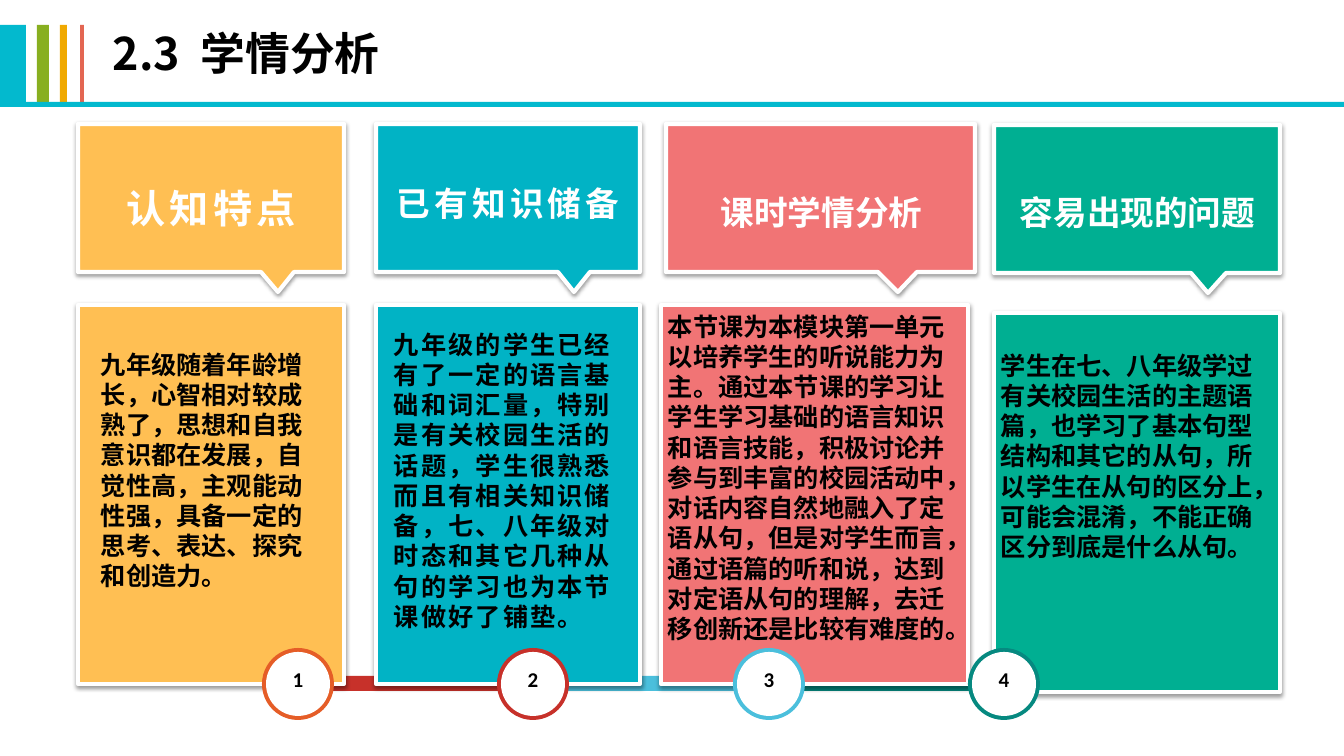
from lxml import etree
from pptx import Presentation
from pptx.dml.color import RGBColor
from pptx.enum.shapes import MSO_SHAPE
from pptx.enum.text import MSO_ANCHOR, PP_ALIGN
from pptx.oxml.ns import qn
from pptx.util import Pt

PX = 914400 / 100.8
RECT, OVAL = MSO_SHAPE.RECTANGLE, MSO_SHAPE.OVAL
TOP, MIDDLE, BOTTOM = MSO_ANCHOR.TOP, MSO_ANCHOR.MIDDLE, MSO_ANCHOR.BOTTOM
LEFT, CENTER = PP_ALIGN.LEFT, PP_ALIGN.CENTER
CJK, LATIN = "Noto Sans CJK SC", "Calibri"

WHITE = RGBColor(0xFF, 0xFF, 0xFF)
BLACK = RGBColor(0, 0, 0)
CYAN = RGBColor(0x03, 0xB9, 0xCE)
GREEN = RGBColor(0x88, 0xAF, 0x20)
AMBER = RGBColor(0xF0, 0xA9, 0x01)
CORAL = RGBColor(0xE3, 0x66, 0x52)
YELLOW = RGBColor(0xFF, 0xBF, 0x53)
TURQUOISE = RGBColor(0x01, 0xB3, 0xC5)
PINK = RGBColor(0xF1, 0x74, 0x75)
EMERALD = RGBColor(0x00, 0xAF, 0x92)
ORANGE = RGBColor(0xE5, 0x5D, 0x27)
RED = RGBColor(0xC7, 0x31, 0x2A)
SKY = RGBColor(0x4B, 0xBF, 0xDC)
TEAL = RGBColor(0x06, 0x89, 0x80)

STRIPES = [(0, 26, CYAN), (37, 12, GREEN), (60, 7, AMBER), (80, 4, CORAL)]
RULE_EDGES = [0, 422, 794, 1092, 1344]
STEP_CENTRES = [298, 533, 769, 1004]
STEP_COLOURS = [ORANGE, RED, SKY, TEAL]

COGNITION = "九年级随着年龄增长，心智相对较成熟了，思想和自我意识都在发展，自觉性高，主观能动性强，具备一定的思考、表达、探究和创造力。"
KNOWLEDGE = "九年级的学生已经有了一定的语言基础和词汇量，特别是有关校园生活的话题，学生很熟悉而且有相关知识储备，七、八年级对时态和其它几种从句的学习也为本节课做好了铺垫。"
LESSON = "本节课为本模块第一单元以培养学生的听说能力为主。通过本节课的学习让学生学习基础的语言知识和语言技能，积极讨论并参与到丰富的校园活动中，对话内容自然地融入了定语从句，但是对学生而言，通过语篇的听和说，达到对定语从句的理解，去迁移创新还是比较有难度的。"
PROBLEMS = "学生在七、八年级学过有关校园生活的主题语篇，也学习了基本句型结构和其它的从句，所以学生在从句的区分上，可能会混淆，不能正确区分到底是什么从句。"


def px(n):
    return round(n * PX)


def add_block(s, kind, x, y, w, h, colour):
    sp = s.shapes.add_shape(kind, px(x), px(y), px(w), px(h))
    sp.shadow.inherit = False
    sp.fill.solid()
    sp.fill.fore_color.rgb = colour
    sp.line.fill.background()
    return sp


def add_box(s, x, y, w, h):
    return s.shapes.add_textbox(px(x), px(y), px(w), px(h))


def frame_card(sp, colour):
    """Give a card its fill, white border and soft shadow below."""
    sp.shadow.inherit = False
    sp.fill.solid()
    sp.fill.fore_color.rgb = colour
    sp.line.color.rgb = WHITE
    sp.line.width = Pt(3)
    effects = sp._element.spPr.find(qn("a:effectLst"))
    shadow = etree.SubElement(effects, qn("a:outerShdw"), blurRad=str(Pt(3.1)),
                              dist=str(Pt(1.6)), dir="5400000", rotWithShape="0")
    black = etree.SubElement(shadow, qn("a:srgbClr"), val="000000")
    etree.SubElement(black, qn("a:alpha"), val="38000")


def add_callout(s, x, y, w, colour):
    tip, half = 0.75 * w, 0.0625 * w
    fb = s.shapes.build_freeform(x, y, scale=PX)
    fb.add_line_segments([(x, y + 148), (x + tip - half, y + 148), (x + tip, y + 168),
                          (x + tip + half, y + 148), (x + w, y + 148), (x + w, y)])
    sp = fb.convert_to_shape()
    frame_card(sp, colour)
    return sp


def add_run(p, text, size, colour, font=CJK, spacing=0):
    r = p.add_run()
    r.text = text
    r.font.size = Pt(size)
    r.font.bold = True
    r.font.color.rgb = colour
    r.font.name = font
    rpr = r.font._element
    etree.SubElement(rpr, qn("a:ea"), typeface=CJK)
    if spacing:
        rpr.set("spc", str(round(spacing * 100)))


def set_frame(sp, anchor, align, insets):
    """Prepare the text frame and return its first paragraph."""
    tf = sp.text_frame
    tf.word_wrap = True
    tf.vertical_anchor = anchor
    tf.margin_left, tf.margin_top, tf.margin_right, tf.margin_bottom = map(px, insets)
    p = tf.paragraphs[0]
    p.alignment = align
    return p


def write_heading(sp, text, size, anchor, bottom, spacing=0):
    p = set_frame(sp, anchor, CENTER, (7, 4, 7, bottom))
    add_run(p, text, size, WHITE, spacing=spacing)


def write_body(sp, text, side, top, font=LATIN, spacing=0):
    p = set_frame(sp, TOP, LEFT, (side, top, side, 4))
    p.line_spacing = Pt(21.6)
    add_run(p, text, 18, BLACK, font, spacing)


def add_title(s):
    title = s.shapes.title
    title.left, title.top, title.width, title.height = map(px, (103, 27, 621, 75))
    p = set_frame(title, TOP, LEFT, (10, 5, 10, 5))
    p.line_spacing = 0.9
    add_run(p, "2.3", 32, BLACK)
    add_run(p, " ", 32, BLACK, spacing=7)
    add_run(p, "学情分析", 32, BLACK)


def add_card(s, body_x, body_y, body_w, head_x, head_y, head_w, colour):
    body = s.shapes.add_shape(RECT, px(body_x), px(body_y), px(body_w), px(379))
    frame_card(body, colour)
    return body, add_callout(s, head_x, head_y, head_w, colour)


def add_step(s, number, centre, colour):
    for size, fill in ((72, colour), (64, WHITE)):
        add_block(s, OVAL, centre - size / 2, 684 - size / 2, size, size, fill)
    box = add_box(s, centre - 18, 661, 36, 36)
    p = set_frame(box, MIDDLE, CENTER, (0, 0, 0, 0))
    add_run(p, str(number), 15, BLACK, LATIN)


def main():
    prs = Presentation()
    prs.slide_width, prs.slide_height = px(1344), px(756)
    s = prs.slides.add_slide(prs.slide_layouts[5])

    for x, w, colour in STRIPES:
        add_block(s, RECT, x, 25, w, 77, colour)
    for x, end in zip(RULE_EDGES, RULE_EDGES[1:]):
        add_block(s, RECT, x, 102, end - x, 5, CYAN)
    add_title(s)

    for x, end, colour in zip(STEP_CENTRES, STEP_CENTRES[1:], STEP_COLOURS[1:]):
        add_block(s, RECT, x, 676, end - x, 15, colour)

    problems, _ = add_card(s, 994, 313, 286, 994, 125, 286, EMERALD)
    lesson, _ = add_card(s, 661, 305, 307, 666, 124, 309, PINK)
    _, knowledge_head = add_card(s, 376, 305, 264, 376, 124, 264, TURQUOISE)
    _, cognition_head = add_card(s, 78, 305, 266, 78, 124, 266, YELLOW)

    write_body(problems, PROBLEMS, 7, 37)
    write_body(lesson, LESSON, 7, 6)
    write_heading(knowledge_head, "已有知识储备", 24, MIDDLE, 14, 3)
    write_heading(cognition_head, "认知特点", 28, MIDDLE, 4, 3)

    for number, (centre, colour) in enumerate(zip(STEP_CENTRES, STEP_COLOURS), 1):
        add_step(s, number, centre, colour)

    write_heading(add_box(s, 977, 153, 321, 82), "容易出现的问题", 24, BOTTOM, 3)
    write_heading(add_box(s, 656, 153, 331, 82), "课时学情分析", 24, BOTTOM, 3)
    write_body(add_box(s, 91, 343, 243, 254), COGNITION, 10, 6)
    write_body(add_box(s, 384, 323, 256, 315), KNOWLEDGE, 10, 6, CJK, 1.5)

    prs.save("out.pptx")


if __name__ == "__main__":
    main()
